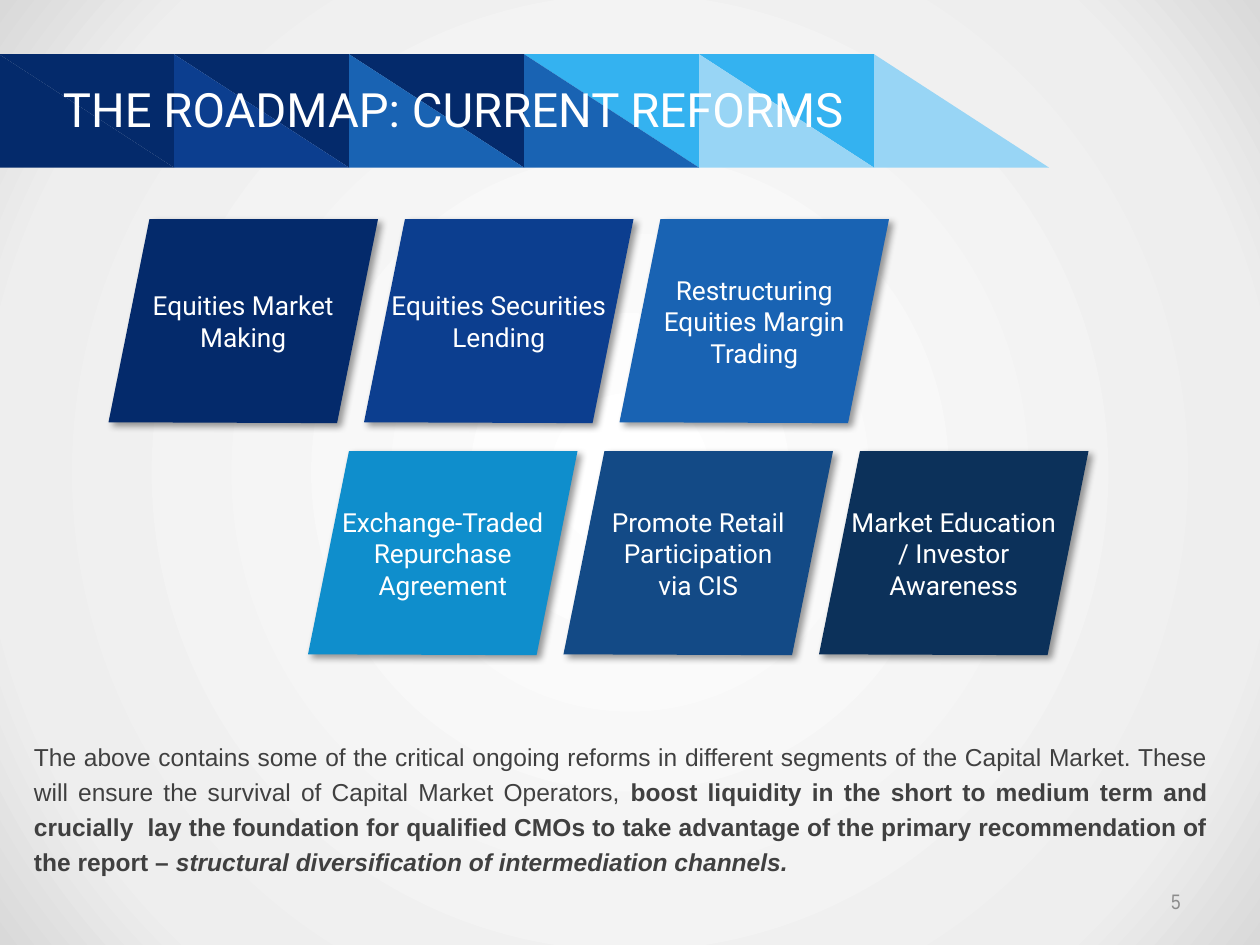
"""Build the roadmap slide of current capital market reforms."""
from dataclasses import dataclass

from pptx import Presentation
from pptx import util as u
from pptx.dml.color import RGBColor
from pptx.enum import text
from pptx.oxml import parse_xml
from pptx.oxml.ns import nsdecls, qn


@dataclass(frozen=True)
class Theme:
    navy: str = "042A6B"
    royal: str = "0C3E8F"
    blue: str = "1963B3"
    sky: str = "34B2F0"
    pale: str = "98D5F5"
    cyan: str = "0F8ECC"
    steel: str = "134A86"
    midnight: str = "0C315A"
    white: str = "FFFFFF"
    body: str = "404040"
    number: str = "8C8C8C"
    backdrop: tuple = ((0, "FFFFFF"), (81, "EEEEEE"), (100, "D9D9D9"))
    heading_font: str = "Roboto"
    body_font: str = "Arial"
    number_font: str = "Arial Narrow"
    title_size: int = 27
    tile_size: int = 15
    body_size: int = 14
    number_size: int = 12


def apply(target, values):
    for name, value in values.items():
        setattr(target, name, value)


class SlideBuilder:
    def __init__(self, slide, theme):
        self.slide = slide
        self.theme = theme

    def background(self):
        self.slide.background.fill.gradient()
        gradient = self.slide.element.find(".//" + qn("a:gradFill"))
        stops = "".join(
            f'<a:gs pos="{position * 1000}"><a:srgbClr val="{color}"/></a:gs>'
            for position, color in self.theme.backdrop
        )
        gradient.getparent().replace(gradient, parse_xml(
            f'<a:gradFill {nsdecls("a")} rotWithShape="1"><a:gsLst>{stops}</a:gsLst>'
            '<a:path path="circle"><a:fillToRect l="50000" t="50000" r="50000" b="50000"/>'
            "</a:path></a:gradFill>"
        ))

    def polygon(self, points, color):
        corners = [(u.Pt(x), u.Pt(y)) for x, y in points]
        builder = self.slide.shapes.build_freeform(*corners[0])
        builder.add_line_segments(corners[1:], close=True)
        shape = builder.convert_to_shape()
        shape.shadow.inherit = False
        shape.fill.solid()
        shape.fill.fore_color.rgb = RGBColor.from_string(color)
        shape.line.fill.background()
        return shape

    def fill_text(self, frame, paragraphs, font, color, layout):
        for index, runs in enumerate(paragraphs):
            paragraph = frame.paragraphs[0] if index == 0 else frame.add_paragraph()
            apply(paragraph, layout)
            for content, emphasis in runs:
                run = paragraph.add_run()
                run.text = content
                apply(run.font, {**font, **emphasis})
                run.font.color.rgb = RGBColor.from_string(color)

    def textbox(self, box, paragraphs, font, color, layout, frame_format):
        frame = self.slide.shapes.add_textbox(*map(u.Pt, box)).text_frame
        apply(frame, {"word_wrap": True, "margin_left": 0, "margin_right": 0,
                      "margin_top": u.Pt(5), "margin_bottom": u.Pt(5), **frame_format})
        self.fill_text(frame, paragraphs, font, color, layout)

    def banner(self, left, top, width, height, color_pairs):
        bottom = top + height
        for index, (upper, lower) in enumerate(color_pairs):
            start = left + index * width
            end = start + width
            if upper:
                self.polygon([(start, top), (end, bottom), (end, top)], upper)
            self.polygon([(start, top), (start, bottom), (end, bottom)], lower)

    def tile(self, left, top, lines, color):
        width, height, slant = 154, 116.6, 23.4
        shape = self.polygon([
            (left + slant, top), (left + width, top),
            (left + width - slant, top + height), (left, top + height - 0.5),
        ], color)
        effects = shape.element.spPr.find(qn("a:effectLst"))
        effects.append(parse_xml(
            f'<a:outerShdw {nsdecls("a")} blurRad="{u.Pt(4)}" dist="{u.Pt(3)}" '
            'dir="2700000" algn="tl" rotWithShape="0"><a:srgbClr val="000000">'
            '<a:alpha val="40000"/></a:srgbClr></a:outerShdw>'
        ))
        frame = shape.text_frame
        apply(frame, {"word_wrap": True, "vertical_anchor": text.MSO_ANCHOR.MIDDLE})
        self.fill_text(frame, [[(line, {})] for line in lines],
                       {"name": self.theme.heading_font, "size": u.Pt(self.theme.tile_size)},
                       self.theme.white, {"alignment": text.PP_ALIGN.CENTER})


def main():
    theme = Theme()
    presentation = Presentation()
    apply(presentation, {"slide_width": u.Pt(720), "slide_height": u.Pt(540)})
    slide = presentation.slides.add_slide(presentation.slide_layouts[6])
    builder = SlideBuilder(slide, theme)
    builder.background()
    builder.banner(-0.5, 31, 100, 64.8, [
        (theme.navy, theme.navy), (theme.navy, theme.royal), (theme.navy, theme.blue),
        (theme.sky, theme.blue), (theme.sky, theme.pale), (None, theme.pale),
    ])
    middle = {"vertical_anchor": text.MSO_ANCHOR.MIDDLE}
    builder.textbox(
        (36, 34, 462, 56), [[("THE ROADMAP: CURRENT REFORMS", {})]],
        {"name": theme.heading_font, "size": u.Pt(theme.title_size)},
        theme.white, {}, middle)
    builder.textbox(
        (516, 500.4, 168, 28.8), [[("5", {})]],
        {"name": theme.number_font, "size": u.Pt(theme.number_size)}, theme.number,
        {"alignment": text.PP_ALIGN.RIGHT},
        {**middle, "margin_left": u.Pt(9.4), "margin_right": u.Pt(9.4)})
    builder.textbox(
        (19.4, 415.4, 671, 85),
        [[
            ("The above contains some of the critical ongoing reforms in different segments "
             "of the Capital Market. These will ensure the survival of Capital Market "
             "Operators, ", {}),
            ("boost liquidity in the short to medium term and crucially  lay the foundation "
             "for qualified CMOs to take advantage of the primary recommendation of the "
             "report – ", {"bold": True}),
            ("structural diversification of intermediation channels.",
             {"bold": True, "italic": True}),
        ]],
        {"name": theme.body_font, "size": u.Pt(theme.body_size)}, theme.body,
        {"alignment": text.PP_ALIGN.JUSTIFY, "line_spacing": 1.2,
         "space_before": u.Pt(5), "space_after": u.Pt(5)}, {})
    rows = [
        (62, 125.2, [
            (["Equities Market Making"], theme.navy),
            (["Equities Securities Lending"], theme.royal),
            (["Restructuring Equities Margin Trading"], theme.blue),
        ]),
        (176, 257.8, [
            (["Exchange-Traded Repurchase Agreement"], theme.cyan),
            (["Promote Retail Participation", "via CIS"], theme.steel),
            (["Market Education", "/ Investor", "Awareness"], theme.midnight),
        ]),
    ]
    for left, top, reforms in rows:
        for column, (lines, color) in enumerate(reforms):
            builder.tile(left + column * 146, top, lines, color)
    presentation.save("out.pptx")


if __name__ == "__main__":
    main()
